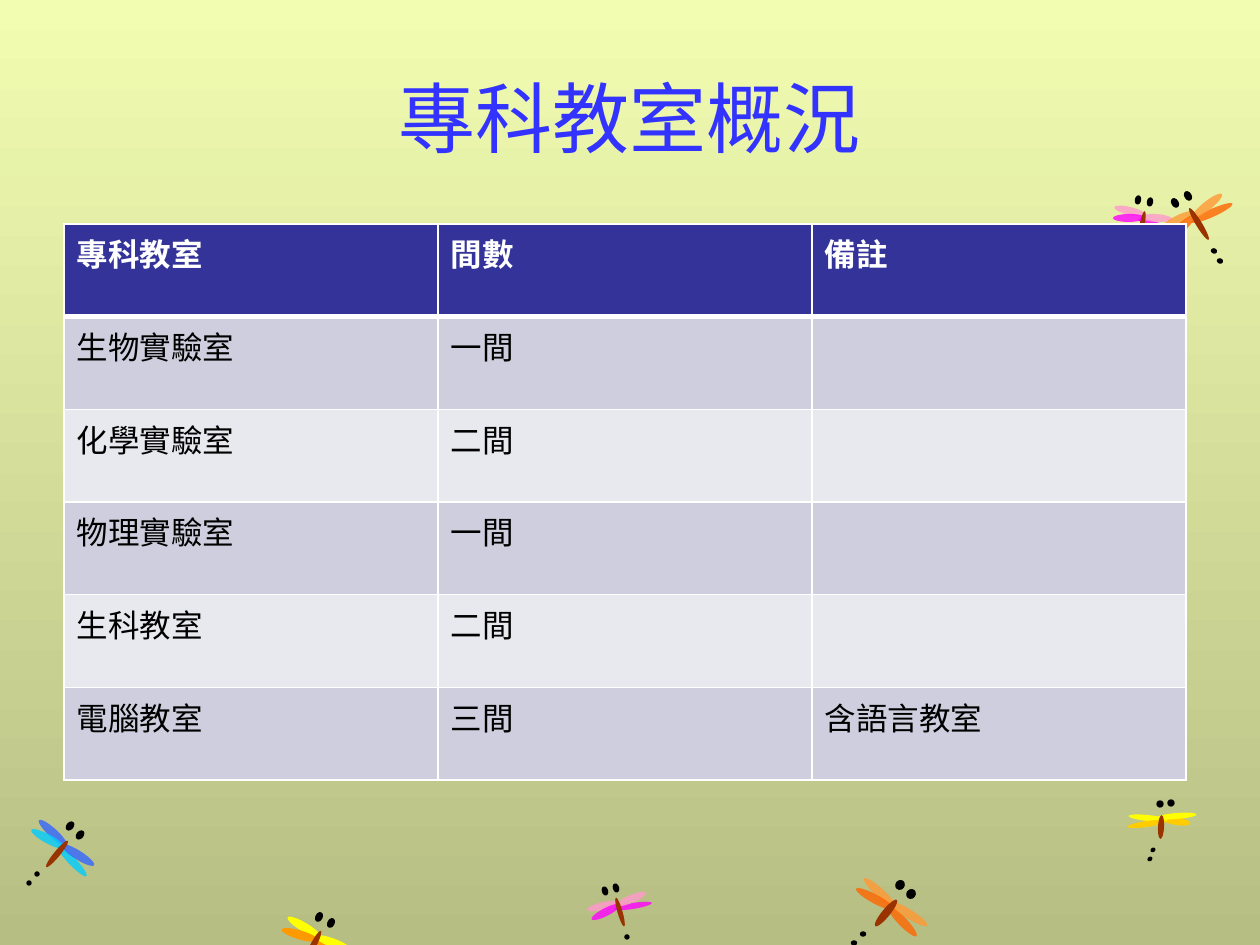
from lxml.etree import SubElement
from pptx import Presentation
from pptx.dml.color import RGBColor
from pptx.enum.shapes import MSO_SHAPE
from pptx.enum.text import MSO_ANCHOR, PP_ALIGN
from pptx.oxml.ns import qn
from pptx.util import Pt

SCALE = 914400 / 126
FONT = "Arial"
HUES = {
    "sky": "F2FDB1", "ground": "B7BE84", "title": "3333FF",
    "head": "333399", "odd": "CECEDE", "even": "E8E8EF",
    "white": "FFFFFF", "black": "000000", "body": "993300",
    "pink": "FF99CC", "magenta": "FF00FF", "yellow": "FFFF00",
    "amber": "FF9900", "gold": "FFCC00", "blue": "3366FF",
    "cyan": "00CCFF", "peach": "FF9933", "orange": "FF6600",
}
ROWS = [
    ("專科教室", "間數", "備註"),
    ("生物實驗室", "一間", ""),
    ("化學實驗室", "二間", ""),
    ("物理實驗室", "一間", ""),
    ("生科教室", "二間", ""),
    ("電腦教室", "三間", "含語言教室"),
]
TURNS = (7, 172.9, 183.1, -11)
SMALL = ((38, 6), (32, 8), (5, 30), (5, 8), (4, 4))
LARGE = ((42, 8), (38, 9), (6, 34), (6, 9), (4, 4))
FLAT = ((29, 8), (39, 6), (6, 24), (6, 6), (4, 3))
WIDE = ((42, 9), (43, 9), (8, 34), (8, 9), (5, 4))
LONG = ((45, 8), (38, 9), (6, 37), (6, 9), (4, 5))
FLIES = [
    ((1142, 226), 10.4, "magenta", "pink", 80, SMALL,
     [(14, -1), (14, -8), (-12, -15), (-13, -8)],
     [(-4, -26), (8, -24)], [(-6, 25), (-7, 33)]),
    ((620, 912), 343.9, "magenta", "pink", 80, SMALL,
     [(13, -6), (11, -13), (-17, -6), (-14, 0)],
     [(-15, -21), (-4, -24)], [(7, 25)]),
    ((313, 946), 27.6, "amber", "yellow", 100, LARGE,
     [(16, 4), (20, -3), (-9, -19), (-13, -11)],
     [(6, -29), (18, -23)], []),
    ((57, 854), 39.4, "cyan", "blue", 80, LARGE,
     [(15, 7), (21, 1), (-4, -21), (-9, -15)],
     [(13, -28), (23, -19)], [(-20, 20), (-28, 29)]),
    ((1161, 827), 2.8, "gold", "yellow", 100, FLAT,
     [(15, -6), (16, -11), (-13, -9), (-14, -3)],
     [(-1, -23), (10, -24)], [(-8, 23), (-11, 32)]),
    ((886, 913), 39.4, "orange", "peach", 80, WIDE,
     [(16, 8), (23, 1), (-6, -20), (-11, -14)],
     [(14, -28), (25, -19)], [(-23, 21), (-32, 30)]),
    ((1199, 224), 328.6, "orange", "peach", 80, LONG,
     [(13, -11), (8, -18), (-23, -3), (-18, 4)],
     [(-24, -21), (-11, -28)], [(15, 27), (21, 37)]),
]


def px(num):
    """Turn px into EMU."""
    return round(num * SCALE)


def rgb(hue):
    """Look up a colour by name."""
    return RGBColor.from_string(HUES[hue])


def write(para, text, size, hue, bold=False):
    """Add one formatted run."""
    run = para.add_run()
    run.text = text
    run.font.name = FONT
    run.font.size = Pt(size)
    run.font.bold = bold
    run.font.color.rgb = rgb(hue)


def oval(slide, mid, size, turn, hue, alpha=100, line=False):
    """Draw a turned ellipse around its centre."""
    (x, y), (w, h) = mid, size
    shape = slide.shapes.add_shape(
        MSO_SHAPE.OVAL, px(x - w / 2), px(y - h / 2), px(w), px(h))
    shape.rotation = turn % 360
    shape.shadow.inherit = False
    shape.fill.solid()
    shape.fill.fore_color.rgb = rgb(hue)
    if alpha < 100:
        tint = shape._element.spPr.find(".//" + qn("a:srgbClr"))
        SubElement(tint, qn("a:alpha"), val=str(alpha * 1000))
    if line:
        shape.line.color.rgb = rgb(hue)
        shape.line.width = Pt(0.75)
    else:
        shape.line.fill.background()


def fly(slide, mid, turn, low, high, alpha, sizes, wings, eyes, tail):
    """Draw a dragonfly around the middle of its body."""
    first, wing, body, eye, dot = sizes

    def at(gap):
        """Shift a gap to the body."""
        return mid[0] + gap[0], mid[1] + gap[1]

    spans = (first, wing, wing, wing)
    for gap, size, lean, hue in zip(wings, spans, TURNS, (low, high, high, low)):
        oval(slide, at(gap), size, turn + lean, hue, alpha)
    oval(slide, mid, body, turn, "body")
    for gap in eyes:
        oval(slide, at(gap), eye, turn, "black", line=True)
    for gap in tail:
        oval(slide, at(gap), dot, turn - 39.4, "black", line=True)


def title(slide, x, y, w, h):
    """Place the slide title."""
    box = slide.shapes.title
    box.left, box.top, box.width, box.height = map(px, (x, y, w, h))
    frame = box.text_frame
    frame.vertical_anchor = MSO_ANCHOR.MIDDLE
    para = frame.paragraphs[0]
    para.alignment = PP_ALIGN.CENTER
    write(para, "專科教室概況", 44, "title")


def edge(cell, side, width):
    """Draw one white cell border."""
    props = cell._tc.get_or_add_tcPr()
    line = SubElement(props, qn("a:" + side), w=str(Pt(width)))
    fill = SubElement(line, qn("a:solidFill"))
    SubElement(fill, qn("a:srgbClr"), val=HUES["white"])


def rooms(slide, x, y, w, h):
    """Place the table of classrooms."""
    table = slide.shapes.add_table(
        len(ROWS), len(ROWS[0]), *map(px, (x, y, w, h))).table
    for r, row in enumerate(ROWS):
        head = r == 0
        hue = "head" if head else "odd" if r % 2 else "even"
        for c, text in enumerate(row):
            cell = table.cell(r, c)
            for side in ("lnL", "lnR", "lnT", "lnB"):
                thick = (head and side == "lnB") or (r == 1 and side == "lnT")
                edge(cell, side, 3 if thick else 1)
            cell.fill.solid()
            cell.fill.fore_color.rgb = rgb(hue)
            if text:
                write(cell.text_frame.paragraphs[0], text, 18,
                      "white" if head else "black", head)


def main():
    """Build and save the slide."""
    deck = Presentation()
    deck.slide_width, deck.slide_height = px(1260), px(945)
    slide = deck.slides.add_slide(deck.slide_layouts[5])
    fill = slide.background.fill
    fill.gradient()
    fill.gradient_angle = 270
    for stop, hue in zip(fill.gradient_stops, ("sky", "ground")):
        stop.color.rgb = rgb(hue)
    for parts in FLIES:
        fly(slide, *parts)
    title(slide, 63, 38, 1134, 158)
    rooms(slide, 64, 224, 1122, 556)
    deck.save("out.pptx")


if __name__ == "__main__":
    main()
